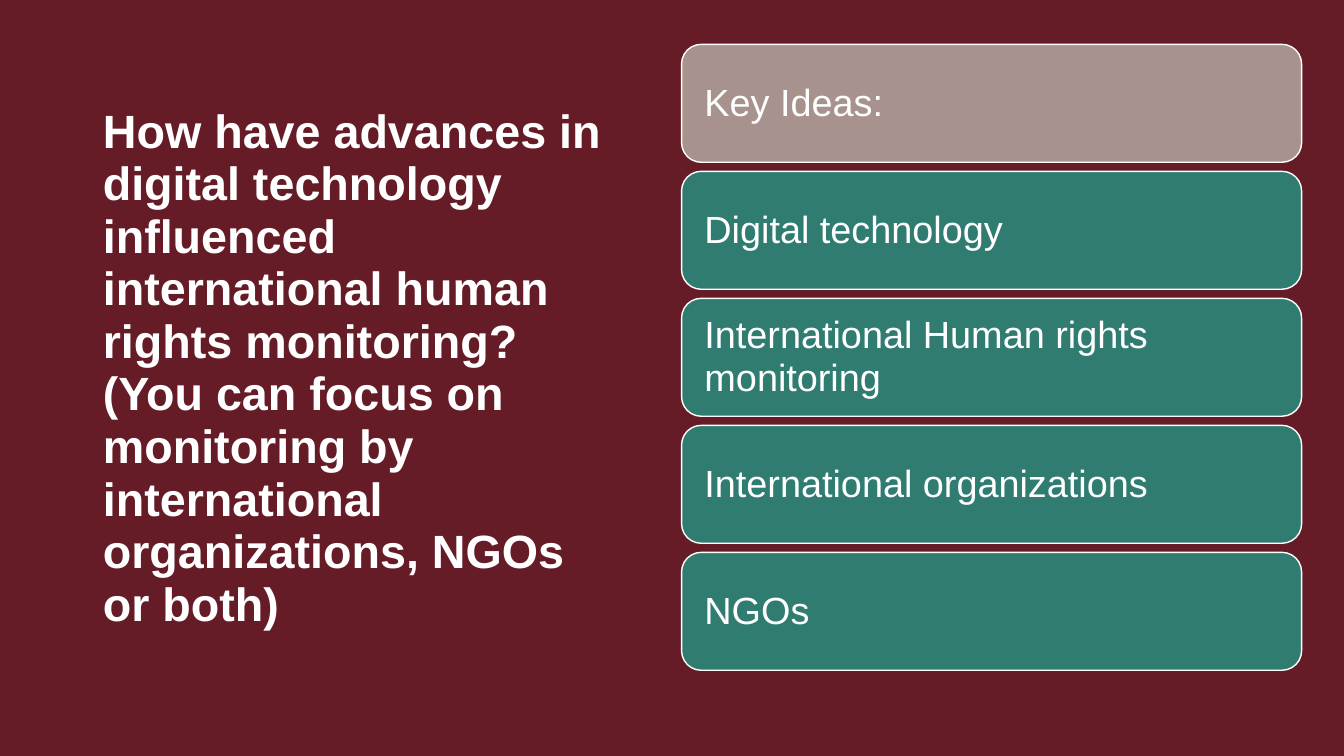
from dataclasses import dataclass

from pptx import Presentation
from pptx.dml.color import RGBColor
from pptx.enum.shapes import MSO_SHAPE
from pptx.enum.text import MSO_ANCHOR, MSO_AUTO_SIZE, PP_ALIGN
from pptx.slide import Slide
from pptx.text.text import TextFrame
from pptx.util import Inches, Pt


@dataclass(frozen=True)
class Theme:
    font: str = "Arial"
    background: RGBColor = RGBColor(0x65, 0x1C, 0x27)
    heading: RGBColor = RGBColor(0xA7, 0x92, 0x8D)
    idea: RGBColor = RGBColor(0x30, 0x7C, 0x71)
    text: RGBColor = RGBColor(0xFF, 0xFF, 0xFF)
    title_size: float = 33.3
    card_size: float = 27
    title_spacing: float = 0.94
    card_spacing: float = 0.95


@dataclass(frozen=True)
class Card:
    label: str
    fill: RGBColor


THEME = Theme()
QUESTION = (
    "How have advances in digital technology influenced international human "
    "rights monitoring? \v(You can focus on monitoring by international "
    "organizations, NGOs or both)"
)
CARDS = [
    Card("Key Ideas:", THEME.heading),
    Card("Digital technology", THEME.idea),
    Card("International Human rights monitoring", THEME.idea),
    Card("International organizations", THEME.idea),
    Card("NGOs", THEME.idea),
]
CARD_LEFT, CARD_TOP = 6.76, 0.44
CARD_WIDTH, CARD_HEIGHT = 6.15, 1.17
CARD_PITCH = 1.26
CARD_INSET = 0.17


def write_text(frame: TextFrame, text: str, size: float, spacing: float, bold: bool) -> None:
    frame.word_wrap = True
    frame.auto_size = MSO_AUTO_SIZE.NONE
    frame.vertical_anchor = MSO_ANCHOR.MIDDLE
    para = frame.paragraphs[0]
    para.text = text
    para.alignment = PP_ALIGN.LEFT
    para.line_spacing = spacing
    para.font.name = THEME.font
    para.font.size = Pt(size)
    para.font.bold = bold
    para.font.color.rgb = THEME.text


def place_title(page: Slide) -> None:
    title = page.shapes.title
    title.left, title.top = Inches(0.92), Inches(0.61)
    title.width, title.height = Inches(5.33), Inches(6.1)
    write_text(title.text_frame, QUESTION, THEME.title_size, THEME.title_spacing, True)


def draw_card(page: Slide, card: Card, row: int) -> None:
    box = page.shapes.add_shape(
        MSO_SHAPE.ROUNDED_RECTANGLE,
        Inches(CARD_LEFT),
        Inches(CARD_TOP + row * CARD_PITCH),
        Inches(CARD_WIDTH),
        Inches(CARD_HEIGHT),
    )
    box.shadow.inherit = False
    box.fill.solid()
    box.fill.fore_color.rgb = card.fill
    box.line.color.rgb = THEME.text
    box.line.width = Pt(1)
    frame = box.text_frame
    frame.margin_left = frame.margin_right = Inches(CARD_INSET)
    write_text(frame, card.label, THEME.card_size, THEME.card_spacing, False)


def main() -> None:
    deck = Presentation()
    deck.slide_width, deck.slide_height = Inches(13.33), Inches(7.5)
    page = deck.slides.add_slide(deck.slide_layouts.get_by_name("Title Only"))
    page.background.fill.solid()
    page.background.fill.fore_color.rgb = THEME.background
    place_title(page)
    for row, card in enumerate(CARDS):
        draw_card(page, card, row)
    deck.save("out.pptx")


if __name__ == "__main__":
    main()
